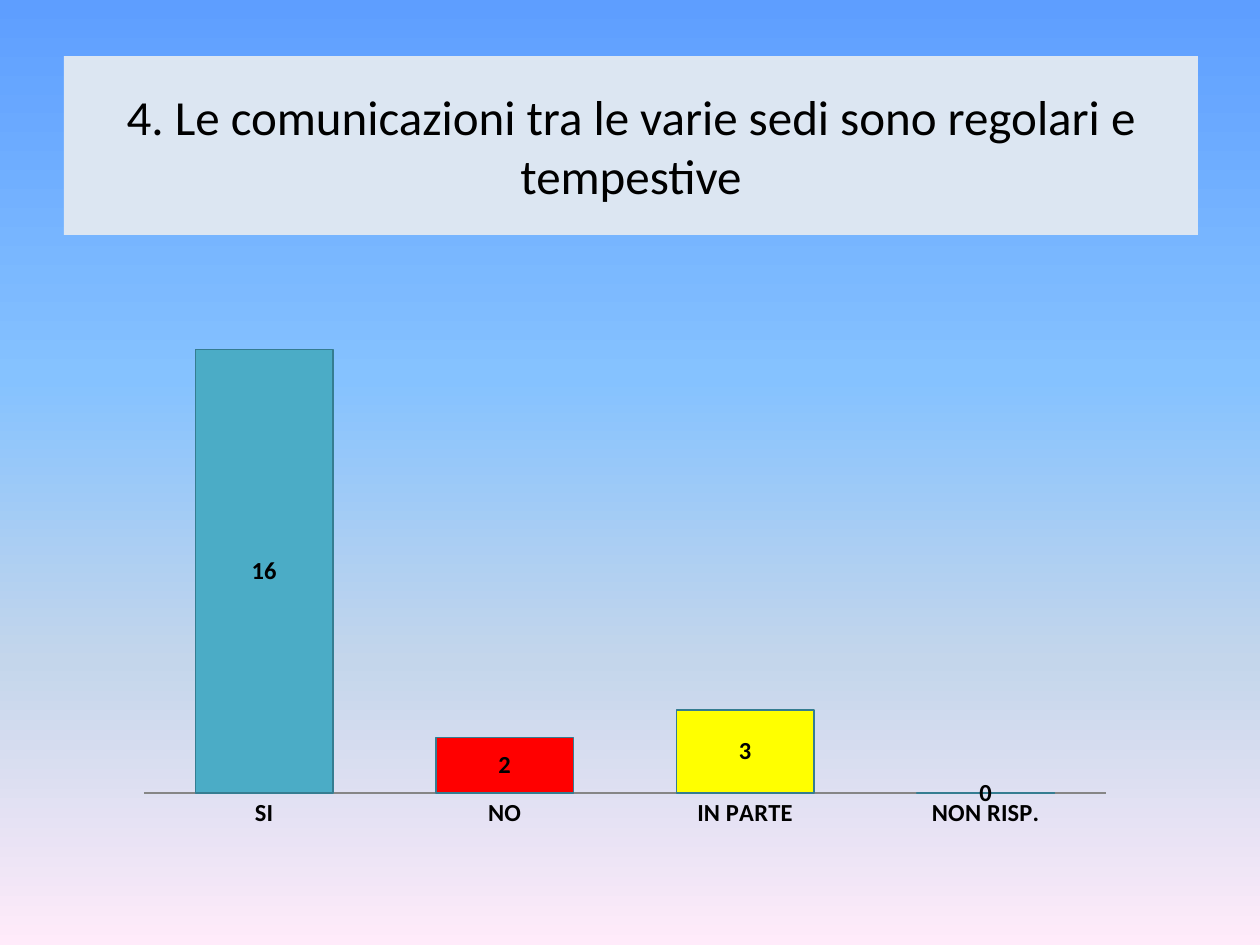
import dataclasses

import lxml.etree
import pptx
import pptx.chart.chart
import pptx.chart.data
import pptx.dml.color
import pptx.enum.chart
import pptx.enum.text
import pptx.oxml
import pptx.oxml.ns
import pptx.slide
import pptx.util

RGB = pptx.dml.color.RGBColor
BLACK = RGB(0x00, 0x00, 0x00)
PALE = RGB(0xDC, 0xE6, 0xF2)
TEAL = RGB(0x4B, 0xAC, 0xC6)
RED = RGB(0xFF, 0x00, 0x00)
YELLOW = RGB(0xFF, 0xFF, 0x00)
GREEN = RGB(0x00, 0xB0, 0x50)
EDGE = RGB(0x35, 0x7D, 0x91)
GREY = RGB(0x86, 0x86, 0x86)
SKY = [
    (0, RGB(0x5E, 0x9E, 0xFF)),
    (40, RGB(0x85, 0xC2, 0xFF)),
    (70, RGB(0xC4, 0xD6, 0xEB)),
    (100, RGB(0xFF, 0xEB, 0xFA)),
]

FONT = "Calibri"
SCALE = 914400 // 126  # EMU per px
qn = pptx.oxml.ns.qn


@dataclasses.dataclass
class Box:
    left: int
    top: int
    width: int
    height: int

    def emu(self) -> list[int]:
        return [n * SCALE for n in dataclasses.astuple(self)]


@dataclasses.dataclass
class Bar:
    name: str
    value: int
    color: RGB


FRAME = Box(123, 283, 1002, 556)
PLOT = Box(144, 294, 962, 499)
BARS = [
    Bar("SI", 16, TEAL),
    Bar("NO", 2, RED),
    Bar("IN PARTE", 3, YELLOW),
    Bar("NON RISP.", 0, GREEN),
]


def paint_sky(slide: pptx.slide.Slide) -> None:
    fill = slide.background.fill
    fill.gradient()
    fill.gradient_angle = 270
    stops = next(slide.element.iter(qn("a:gsLst")))
    stops.clear()
    for pos, color in SKY:
        stop = lxml.etree.SubElement(stops, qn("a:gs"), pos=str(pos * 1000))
        lxml.etree.SubElement(stop, qn("a:srgbClr"), val=str(color))


def set_title(slide: pptx.slide.Slide, text: str, box: Box) -> None:
    title = slide.shapes.title
    title.left, title.top, title.width, title.height = box.emu()
    title.fill.solid()
    title.fill.fore_color.rgb = PALE
    frame = title.text_frame
    frame.text = text
    frame.word_wrap = True
    frame.auto_size = pptx.enum.text.MSO_AUTO_SIZE.NONE
    frame.vertical_anchor = pptx.enum.text.MSO_ANCHOR.MIDDLE
    line = frame.paragraphs[0]
    line.alignment = pptx.enum.text.PP_ALIGN.CENTER
    line.font.name = FONT
    line.font.size = pptx.util.Pt(28)
    line.font.color.rgb = BLACK


def place_plot(chart: pptx.chart.chart.Chart, frame: Box, plot: Box) -> None:
    """Fix the inner plot area as fractions of the chart frame."""
    area = next(chart.element.iter(qn("c:plotArea")))
    for old in area.findall(qn("c:layout")):
        area.remove(old)
    layout = lxml.etree.Element(qn("c:layout"))
    manual = lxml.etree.SubElement(layout, qn("c:manualLayout"))
    parts = {
        "layoutTarget": "inner",
        "xMode": "edge",
        "yMode": "edge",
        "x": (plot.left - frame.left) / frame.width,
        "y": (plot.top - frame.top) / frame.height,
        "w": plot.width / frame.width,
        "h": plot.height / frame.height,
    }
    for key, val in parts.items():
        lxml.etree.SubElement(manual, qn(f"c:{key}"), val=str(val))
    area.insert(0, layout)


def add_bars(slide: pptx.slide.Slide, bars: list[Bar]) -> None:
    data = pptx.chart.data.CategoryChartData()
    data.categories = [bar.name for bar in bars]
    data.add_series("Series 1", [bar.value for bar in bars])
    kind = pptx.enum.chart.XL_CHART_TYPE.COLUMN_STACKED
    chart = slide.shapes.add_chart(kind, *FRAME.emu(), data).chart
    chart.has_legend = False
    chart.has_title = False
    chart.font.name = FONT
    chart.font.size = pptx.util.Pt(14)
    chart.font.bold = True
    chart.font.color.rgb = BLACK
    place_plot(chart, FRAME, PLOT)

    # Axes
    none = pptx.enum.chart.XL_TICK_MARK.NONE
    chart.category_axis.major_tick_mark = none
    chart.category_axis.format.line.color.rgb = GREY
    scale = chart.value_axis
    scale.minimum_scale, scale.maximum_scale = 0, 18
    scale.has_major_gridlines = False
    scale.visible = False

    # Columns and their values
    plot = chart.plots[0]
    plot.gap_width, plot.overlap = 75, 100
    plot.vary_by_categories = False
    series = plot.series[0]
    for i, bar in enumerate(bars):
        look = series.points[i].format
        look.fill.solid()
        look.fill.fore_color.rgb = bar.color
        look.line.color.rgb = EDGE
        look.line.width = pptx.util.Pt(1)
    labels = series.data_labels
    labels.show_value = True
    labels.position = pptx.enum.chart.XL_LABEL_POSITION.CENTER
    labels.font.name = FONT
    labels.font.size = pptx.util.Pt(14)
    labels.font.bold = True
    labels.font.color.rgb = BLACK


def main() -> None:
    deck = pptx.Presentation()
    deck.slide_width = 1260 * SCALE
    deck.slide_height = 945 * SCALE
    slide = deck.slides.add_slide(deck.slide_layouts[5])
    paint_sky(slide)
    set_title(
        slide,
        "4. Le comunicazioni tra le varie sedi sono regolari e tempestive",
        Box(64, 56, 1134, 179),
    )
    add_bars(slide, BARS)
    deck.save("out.pptx")


if __name__ == "__main__":
    main()
